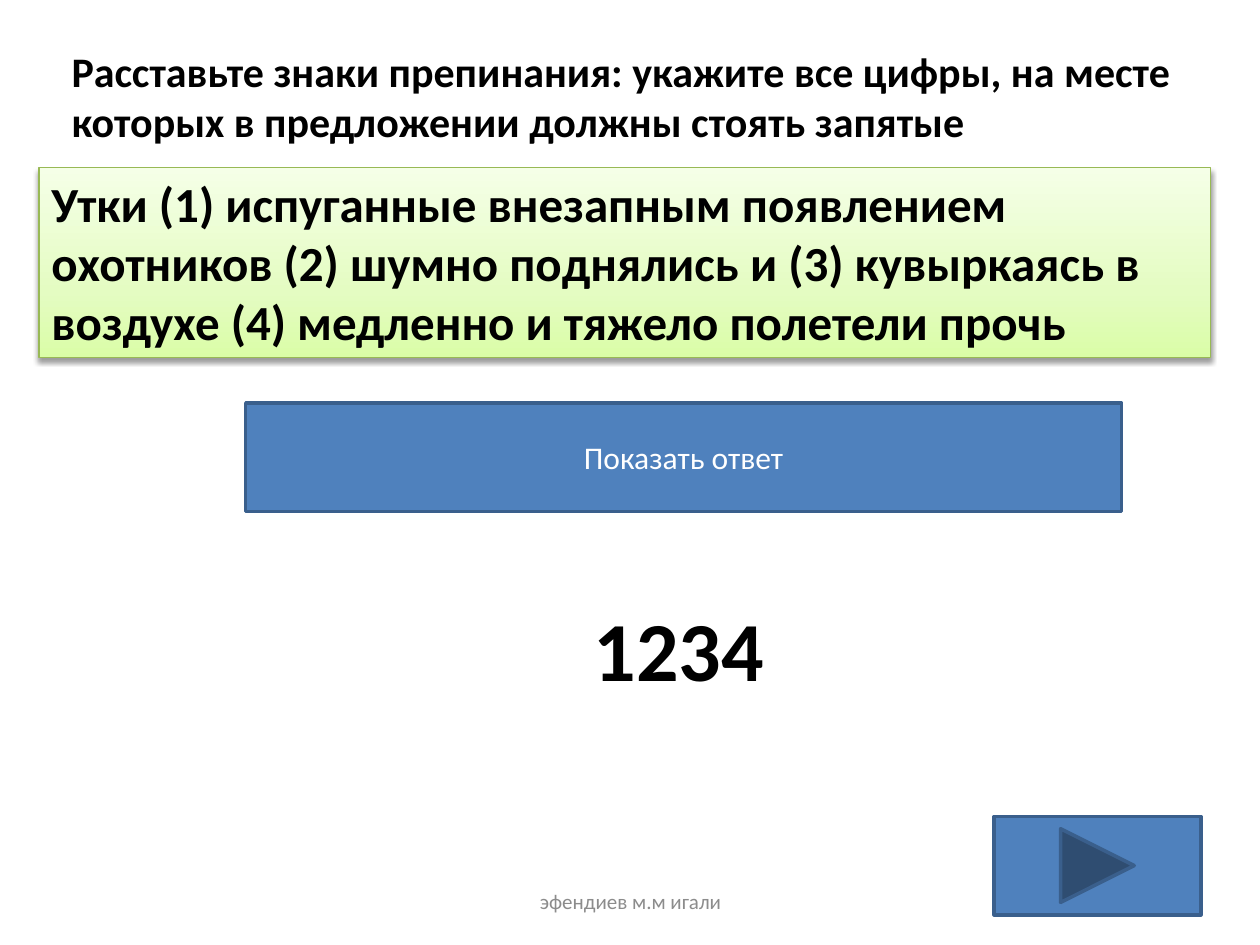
from dataclasses import dataclass

from lxml.etree import SubElement
from pptx import Presentation
from pptx.dml.color import RGBColor
from pptx.enum.shapes import MSO_SHAPE as Preset
from pptx.enum.text import MSO_ANCHOR as Anchor, MSO_AUTO_SIZE as AutoSize, PP_ALIGN as Align
from pptx.oxml.ns import qn
from pptx.util import Inches, Pt


@dataclass(frozen=True)
class Theme:
    font: str = "Calibri"
    ink: str = "000000"
    footer: str = "8C8C8C"
    light: str = "FFFFFF"
    button: str = "4F81BD"
    button_line: str = "3A5F8C"
    panel_line: str = "98B955"
    panel_stops: tuple = ((0, "DAFDA7"), (35, "E4FCC2"), (100, "F5FFE7"))
    task_size: int = 24
    sentence_size: int = 28
    button_size: int = 18
    answer_size: int = 48
    footer_size: int = 12


THEME = Theme()


def inches(box):
    return [Inches(length) for length in box]


def set_all(target, values):
    for name, value in values.items():
        setattr(target, name, value)


def write(shape, text, size, color, bold=False, align=Align.LEFT,
          anchor=Anchor.TOP, auto_size=AutoSize.NONE):
    frame = shape.text_frame
    set_all(frame, {"word_wrap": True, "auto_size": auto_size, "vertical_anchor": anchor})
    paragraph = frame.paragraphs[0]
    paragraph.alignment = align
    run = paragraph.add_run()
    run.text = text
    set_all(run.font, {"name": THEME.font, "size": Pt(size), "bold": bold})
    run.font.color.rgb = RGBColor.from_string(color)


def add_label(slide, box, text, size, color, **text_format):
    write(slide.shapes.add_textbox(*inches(box)), text, size, color, **text_format)


def add_outlined(slide, preset, box, line_color, line_width):
    shape = slide.shapes.add_shape(preset, *inches(box))
    shape.shadow.inherit = False
    shape.line.color.rgb = RGBColor.from_string(line_color)
    shape.line.width = Pt(line_width)
    return shape


def add_button(slide, preset, box):
    button = add_outlined(slide, preset, box, THEME.button_line, 2)
    button.fill.solid()
    button.fill.fore_color.rgb = RGBColor.from_string(THEME.button)
    return button


def add_sentence_panel(slide, box, text):
    panel = add_outlined(slide, Preset.RECTANGLE, box, THEME.panel_line, 0.75)
    properties = panel._element.spPr

    # Three-stop gradient running upwards
    panel.fill.gradient()
    panel.fill.gradient_angle = 90
    stops = properties.find(qn("a:gradFill")).find(qn("a:gsLst"))
    for stop in list(stops):
        stops.remove(stop)
    for position, color in THEME.panel_stops:
        stop = SubElement(stops, qn("a:gs"), pos=str(position * 1000))
        SubElement(stop, qn("a:srgbClr"), val=color)

    # Soft shadow straight below
    shadow = SubElement(properties.find(qn("a:effectLst")), qn("a:outerShdw"),
                        blurRad=str(Pt(3.1)), dist=str(Pt(1.6)),
                        dir="5400000", rotWithShape="0")
    shadow_color = SubElement(shadow, qn("a:srgbClr"), val=THEME.ink)
    SubElement(shadow_color, qn("a:alpha"), val="38000")

    write(panel, text, THEME.sentence_size, THEME.ink, bold=True,
          auto_size=AutoSize.SHAPE_TO_FIT_TEXT)


def build_question(slide):
    # Task and sentence
    add_label(slide, (0.47, 0.31, 9.22, 0.91),
              "Расставьте знаки препинания: укажите все цифры, на месте "
              "которых в предложении должны стоять запятые",
              THEME.task_size, THEME.ink, bold=True, auto_size=AutoSize.SHAPE_TO_FIT_TEXT)
    add_sentence_panel(slide, (0.31, 1.33, 9.3, 1.51),
                       "Утки (1) испуганные внезапным появлением охотников (2) шумно "
                       "поднялись и (3) кувыркаясь в воздухе (4) медленно и тяжело "
                       "полетели прочь")

    # Answer button and answer
    show_answer = add_button(slide, Preset.ACTION_BUTTON_CUSTOM, (1.95, 3.2, 6.95, 0.86))
    write(show_answer, "Показать ответ", THEME.button_size, THEME.light,
          align=Align.CENTER, anchor=Anchor.MIDDLE)
    add_label(slide, (1.95, 4.69, 6.88, 0.91), "1234", THEME.answer_size, THEME.ink,
              bold=True, align=Align.CENTER, auto_size=AutoSize.SHAPE_TO_FIT_TEXT)

    # Footer and navigation
    add_label(slide, (3.42, 6.95, 3.17, 0.4), "эфендиев м.м игали",
              THEME.footer_size, THEME.footer, align=Align.CENTER, anchor=Anchor.MIDDLE)
    add_button(slide, Preset.ACTION_BUTTON_FORWARD_OR_NEXT, (7.89, 6.48, 1.64, 0.78))


def main():
    presentation = Presentation()
    set_all(presentation, {"slide_width": Inches(10), "slide_height": Inches(7.5)})
    build_question(presentation.slides.add_slide(presentation.slide_layouts[6]))
    presentation.save("out.pptx")


if __name__ == "__main__":
    main()
